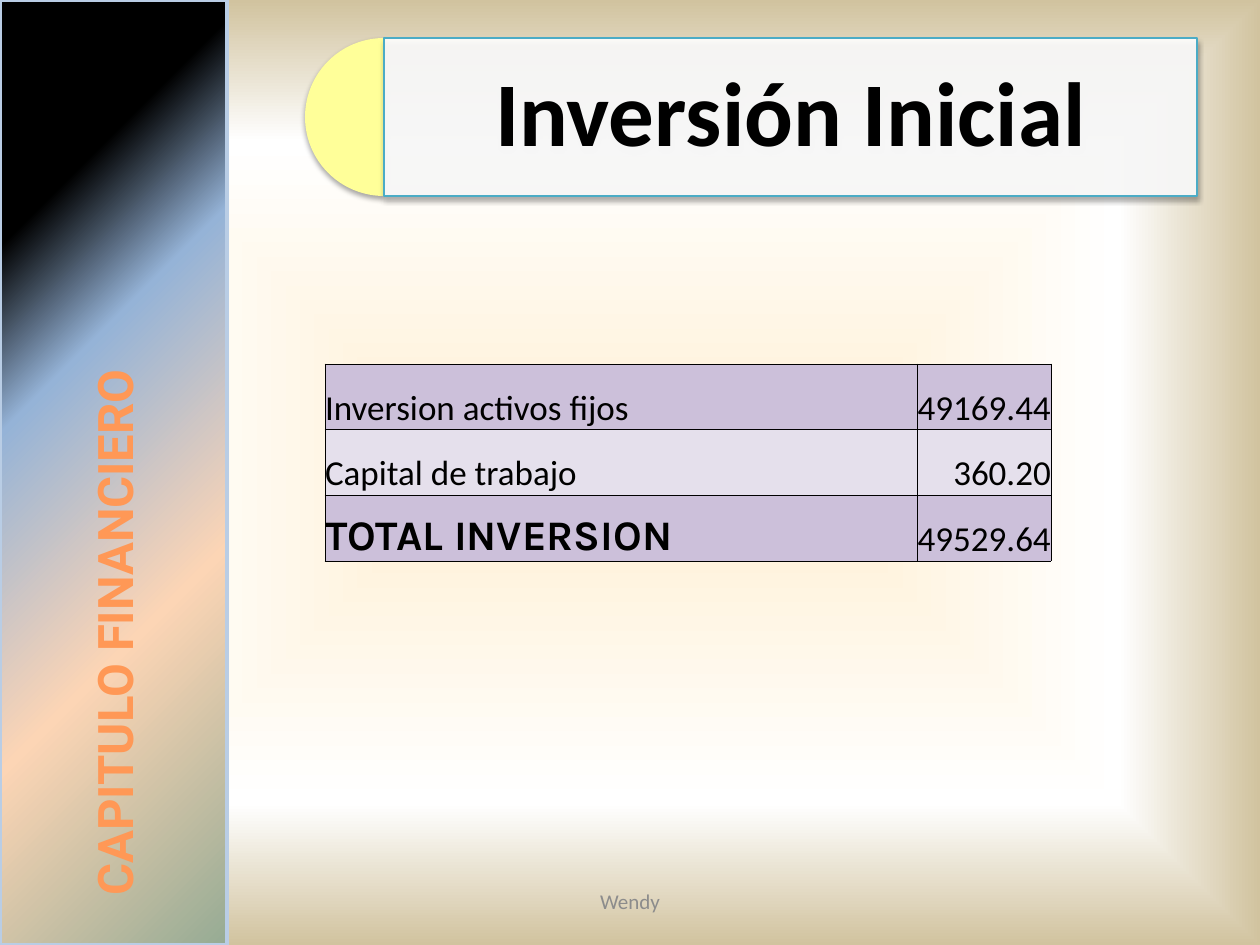
from dataclasses import dataclass

from pptx import Presentation
from pptx.dml.color import RGBColor as RGB
from pptx.enum.shapes import MSO_SHAPE as Kind
from pptx.enum.text import MSO_ANCHOR as Anchor, MSO_AUTO_SIZE as Fit, PP_ALIGN as Align
from pptx.oxml import parse_xml
from pptx.oxml.ns import nsdecls, qn
from pptx.util import Pt

SCALE = 914400 / 126  # EMU in one px
BLACK = RGB(0x00, 0x00, 0x00)
WHITE = RGB(0xFF, 0xFF, 0xFF)
GRAY = RGB(0x8C, 0x8C, 0x8C)
ORANGE = RGB(0xFF, 0x98, 0x56)
YELLOW = RGB(0xFF, 0xFF, 0x99)
TEAL = RGB(0x4B, 0xAC, 0xC6)
PALE = RGB(0xB9, 0xCD, 0xE5)
LILAC = RGB(0xCC, 0xC0, 0xDA)
MIST = RGB(0xE5, 0xE0, 0xEC)
CREAM = RGB(0xFF, 0xEF, 0xD1)
SAND = RGB(0xD1, 0xC3, 0x9F)
BLUE = RGB(0x95, 0xB3, 0xD7)
PEACH = RGB(0xFC, 0xD5, 0xB5)
SAGE = RGB(0x96, 0xAB, 0x94)


@dataclass
class Style:
    size: int
    color: RGB = BLACK
    name: str = "Calibri"
    bold: bool = False
    align: Align = Align.LEFT


@dataclass
class Row:
    label: str
    value: str
    fill: RGB
    style: Style


def px(n: int) -> int:
    return round(n * SCALE)


def box(*sides: int) -> list[int]:
    return [px(n) for n in sides]


def write(frame, text: str, style: Style):
    para = frame.paragraphs[0]
    para.text = text
    para.alignment = style.align
    font = para.font
    font.size, font.name, font.bold = Pt(style.size), style.name, style.bold
    font.color.rgb = style.color
    return para


def grad(stops: list[tuple[int, RGB]], course: str):
    marks = "".join(
        f'<a:gs pos="{at * 1000}"><a:srgbClr val="{color}"/></a:gs>' for at, color in stops
    )
    return parse_xml(
        f'<a:gradFill {nsdecls("a")} rotWithShape="1"><a:gsLst>{marks}</a:gsLst>{course}</a:gradFill>'
    )


def blend(props, stops: list[tuple[int, RGB]], course: str) -> None:
    """Put a gradient in the place of a solid fill."""
    props.replace(props.find(qn("a:solidFill")), grad(stops, course))


def shade(shape) -> None:
    """Give the shape a soft shadow straight below it."""
    shape.shadow.inherit = False
    shape._element.spPr.find(qn("a:effectLst")).append(parse_xml(
        f'<a:outerShdw {nsdecls("a")} blurRad="{Pt(3.1)}" dist="{Pt(1.8)}" dir="5400000" '
        f'rotWithShape="0"><a:srgbClr val="{BLACK}"><a:alpha val="35000"/></a:srgbClr></a:outerShdw>'
    ))


def rule(cell) -> None:
    """Draw thin black borders; they must come before the cell's fill."""
    props = cell._tc.get_or_add_tcPr()
    for i, side in enumerate(("lnL", "lnR", "lnT", "lnB")):
        props.insert(i, parse_xml(
            f'<a:{side} {nsdecls("a")} w="{Pt(0.5)}"><a:solidFill>'
            f'<a:srgbClr val="{BLACK}"/></a:solidFill></a:{side}>'
        ))


def add_back(slide) -> None:
    slide.background.fill.solid()
    props = slide._element.find(".//" + qn("p:bgPr"))
    blend(
        props, [(0, CREAM), (70, WHITE), (100, SAND)],
        '<a:path path="shape"><a:fillToRect l="50000" t="50000" r="50000" b="50000"/></a:path>',
    )


def add_band(slide) -> None:
    band = slide.shapes.add_shape(Kind.RECTANGLE, *box(0, 0, 227, 945))
    band.shadow.inherit = False
    band.fill.solid()
    blend(
        band._element.spPr, [(21, BLACK), (37, BLUE), (66, PEACH), (100, SAGE)],
        '<a:lin ang="2700000" scaled="0"/>',
    )
    band.line.color.rgb, band.line.width = PALE, Pt(2)
    frame = band.text_frame
    frame.vertical_anchor = Anchor.MIDDLE
    frame._txBody.bodyPr.set("vert", "vert270")
    para = write(frame, "CAPITULO FINANCIERO", Style(28, ORANGE, "Roboto", True))
    para._p.get_or_add_pPr().set("marL", str(px(37)))


def add_head(slide) -> None:
    cap = slide.shapes.add_shape(Kind.PIE, *box(305, 38, 158, 158))
    cap.adjustments[0], cap.adjustments[1] = 54, 162
    cap.fill.solid()
    cap.fill.fore_color.rgb = YELLOW
    cap.line.fill.background()
    shade(cap)

    title = slide.shapes.title
    title.left, title.top, title.width, title.height = box(384, 38, 813, 158)
    title.fill.solid()
    title.fill.fore_color.rgb = WHITE
    tint = title._element.spPr.find(".//" + qn("a:srgbClr"))
    tint.append(parse_xml(f'<a:alpha {nsdecls("a")} val="90000"/>'))
    title.line.color.rgb, title.line.width = TEAL, Pt(0.75)
    shade(title)
    frame = title.text_frame
    frame.word_wrap, frame.auto_size = True, Fit.NONE
    frame.vertical_anchor = Anchor.MIDDLE
    frame.margin_left = frame.margin_right = frame.margin_top = frame.margin_bottom = px(28)
    para = write(frame, "Inversión Inicial", Style(52, bold=True, align=Align.CENTER))
    para.line_spacing = 0.9
    slide.shapes._spTree.append(title._element)  # above the cap


def add_sums(slide, rows: list[Row]) -> None:
    frame = slide.shapes.add_table(len(rows), 2, *box(325, 364, 726, 197))
    table = frame.table
    table.columns[0].width, table.columns[1].width = box(592, 134)
    for i, row in enumerate(rows):
        pairs = ((row.label, row.style), (row.value, Style(20, align=Align.RIGHT)))
        for j, (text, style) in enumerate(pairs):
            cell = table.cell(i, j)
            cell.margin_left = cell.margin_right = cell.margin_top = cell.margin_bottom = 0
            cell.vertical_anchor = Anchor.BOTTOM
            cell.fill.solid()
            cell.fill.fore_color.rgb = row.fill
            write(cell.text_frame, text, style)
            rule(cell)


def add_foot(slide) -> None:
    frame = slide.shapes.add_textbox(*box(430, 876, 400, 50)).text_frame
    frame.word_wrap = True
    frame.vertical_anchor = Anchor.MIDDLE
    write(frame, "Wendy", Style(12, GRAY, align=Align.CENTER))


def main() -> None:
    deck = Presentation()
    deck.slide_width, deck.slide_height = box(1260, 945)
    slide = deck.slides.add_slide(deck.slide_layouts[5])
    add_back(slide)
    add_foot(slide)
    add_band(slide)
    add_sums(slide, [
        Row("Inversion activos fijos", "49169.44", LILAC, Style(20)),
        Row("Capital de trabajo", "360.20", MIST, Style(20)),
        Row("TOTAL INVERSION", "49529.64", LILAC, Style(24, name="Karla", bold=True)),
    ])
    add_head(slide)
    deck.save("out.pptx")


if __name__ == "__main__":
    main()
